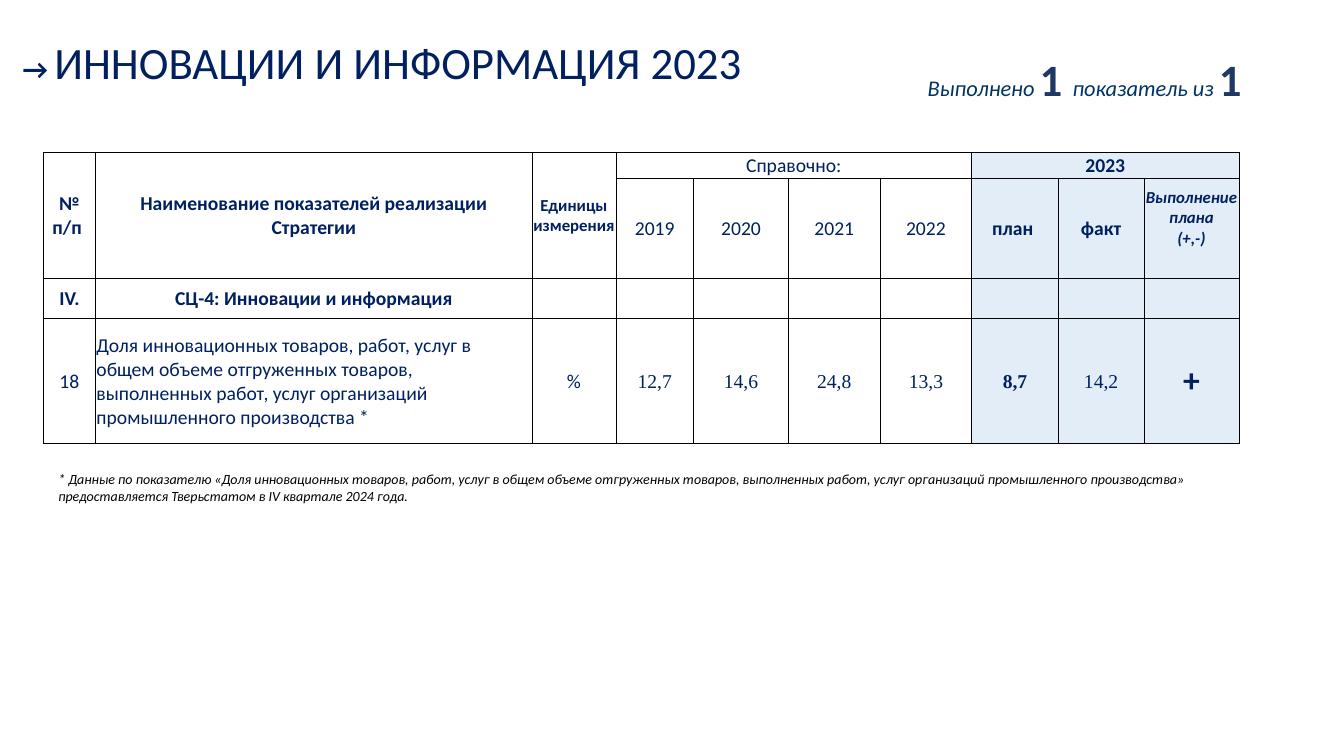
from dataclasses import dataclass

from lxml import etree
from pptx import Presentation
from pptx.dml.color import RGBColor
from pptx.enum.text import MSO_ANCHOR, MSO_AUTO_SIZE, PP_ALIGN
from pptx.oxml.ns import qn
from pptx.util import Cm, Pt

LEFT, MID, RIGHT = PP_ALIGN.LEFT, PP_ALIGN.CENTER, PP_ALIGN.RIGHT
CENTRE = MSO_ANCHOR.MIDDLE
GROW = MSO_AUTO_SIZE.SHAPE_TO_FIT_TEXT

HUES = {"navy": "002060", "teal": "003366", "deep": "203864",
        "black": "000000", "white": "FFFFFF", "tint": "DEEBF7"}
SANS, SERIF = "Calibri", "Times New Roman"


@dataclass
class Run:
    text: str
    size: float
    hue: str
    bold: bool = False
    slant: bool = False


@dataclass
class Box:
    left: float
    top: float
    width: float
    height: float
    align: PP_ALIGN
    runs: list[Run]
    wrap: bool = True


@dataclass
class Entry:
    row: int
    col: int
    text: str
    bold: bool = False
    size: float = 14
    face: str = SANS
    slant: bool = False
    align: PP_ALIGN = MID
    rows: int = 1
    cols: int = 1
    foot: float = 0  # bottom margin


# Text boxes
BOXES = [
    Box(0.23, 0.74, 18.82, 1.63, MID, [
        Run("→ ", 20, "navy", bold=True),
        Run("ИННОВАЦИИ И ИНФОРМАЦИЯ 2023", 32, "navy")], wrap=False),
    Box(1.22, 11.73, 31.39, 1.55, LEFT, [
        Run("* Данные по показателю «Доля инновационных товаров, работ, услуг "
            "в общем объеме отгруженных товаров, выполненных работ, услуг "
            "организаций промышленного производства» предоставляется "
            "Тверьстатом в IV квартале 2024 года.", 10, "black", slant=True)]),
    Box(22.73, 1.19, 8.81, 1.63, RIGHT, [
        Run("Выполнено ", 16, "teal", slant=True),
        Run("1 ", 32, "deep", bold=True),
        Run("показатель из ", 16, "teal", slant=True),
        Run("1", 32, "deep", bold=True)]),
]

# Table
WIDTHS = [1.32, 11, 2.11, 1.96, 2.39, 2.31, 2.31, 2.18, 2.16, 2.39]
HEIGHTS = [0.66, 2.51, 1.02, 3.15]
YEARS = ["2019", "2020", "2021", "2022"]
FIGURES = ["12,7", "14,6", "24,8", "13,3", "8,7", "14,2"]
BASE, PLAN = 3, 7  # first columns of the past years and of 2023

ENTRIES = [
    Entry(0, 0, "№ п/п ", bold=True, rows=2),
    Entry(0, 1, "Наименование показателей реализации Стратегии",
          bold=True, rows=2),
    Entry(0, 2, "Единицы измерения", bold=True, size=12, rows=2),
    Entry(0, BASE, "Справочно:", cols=4),
    Entry(0, PLAN, "2023", bold=True, cols=3),
    *[Entry(1, BASE + n, year) for n, year in enumerate(YEARS)],
    Entry(1, 7, "план ", bold=True),
    Entry(1, 8, "факт", bold=True),
    Entry(1, 9, "Выполнение плана\n(+,-)", bold=True, size=12, slant=True,
          foot=0.55),
    Entry(2, 0, "IV.", bold=True),
    Entry(2, 1, "СЦ-4: Инновации и информация", bold=True),
    Entry(3, 0, "18"),
    Entry(3, 1, "Доля инновационных товаров, работ, услуг в общем объеме "
          "отгруженных товаров, выполненных работ, услуг организаций "
          "промышленного производства *", align=LEFT),
    Entry(3, 2, "%"),
    *[Entry(3, BASE + n, value, bold=BASE + n == PLAN, face=SERIF)
      for n, value in enumerate(FIGURES)],
    Entry(3, 9, "+", bold=True, size=24),
]


def style(font, size: float, hue: str, bold: bool, slant: bool,
          face: str = SANS) -> None:
    font.name, font.size = face, Pt(size)
    font.bold, font.italic = bold, slant
    font.color.rgb = RGBColor.from_string(HUES[hue])


def add_box(slide, box: Box) -> None:
    shape = slide.shapes.add_textbox(
        Cm(box.left), Cm(box.top), Cm(box.width), Cm(box.height))
    frame = shape.text_frame
    frame.word_wrap, frame.auto_size = box.wrap, GROW
    para = frame.paragraphs[0]
    para.alignment = box.align
    for part in box.runs:
        run = para.add_run()
        run.text = part.text
        style(run.font, part.size, part.hue, part.bold, part.slant)


def add_edges(cell) -> None:
    props = cell._tc.get_or_add_tcPr()
    for n, side in enumerate(("lnL", "lnR", "lnT", "lnB")):
        line = etree.Element(qn(f"a:{side}"), w=str(Pt(0.5)))
        fill = etree.SubElement(line, qn("a:solidFill"))
        etree.SubElement(fill, qn("a:srgbClr"), val=HUES["black"])
        props.insert(n, line)


def paint(cell, hue: str) -> None:
    cell.fill.solid()
    cell.fill.fore_color.rgb = RGBColor.from_string(HUES[hue])
    if hue == "tint":
        tone = cell._tc.tcPr.find(".//" + qn("a:srgbClr"))
        etree.SubElement(tone, qn("a:alpha"), val="85000")


def fill_cell(table, entry: Entry) -> None:
    cell = table.cell(entry.row, entry.col)
    if entry.rows * entry.cols > 1:
        cell.merge(table.cell(entry.row + entry.rows - 1,
                              entry.col + entry.cols - 1))
    cell.text = entry.text
    cell.margin_bottom = Cm(entry.foot)
    for para in cell.text_frame.paragraphs:
        para.alignment = entry.align
        style(para.font, entry.size, "navy", entry.bold, entry.slant,
              entry.face)
        for run in para.runs:
            style(run.font, entry.size, "navy", entry.bold, entry.slant,
                  entry.face)


def add_grid(slide) -> None:
    table = slide.shapes.add_table(
        len(HEIGHTS), len(WIDTHS), Cm(1.09), Cm(3.84),
        Cm(sum(WIDTHS)), Cm(sum(HEIGHTS))).table
    table.first_row = table.horz_banding = False
    for column, width in zip(table.columns, WIDTHS):
        column.width = Cm(width)
    for row, height in zip(table.rows, HEIGHTS):
        row.height = Cm(height)
        for col, cell in enumerate(row.cells):
            cell.vertical_anchor = CENTRE
            cell.margin_left = cell.margin_right = cell.margin_top = Cm(0.02)
            cell.margin_bottom = Cm(0)
            paint(cell, "tint" if col >= PLAN else "white")
            add_edges(cell)
    for entry in ENTRIES:
        fill_cell(table, entry)


def main() -> None:
    deck = Presentation()
    deck.slide_width, deck.slide_height = Cm(33.87), Cm(19.05)
    slide = deck.slides.add_slide(deck.slide_layouts[6])
    add_grid(slide)
    for box in BOXES:
        add_box(slide, box)
    deck.save("out.pptx")


if __name__ == "__main__":
    main()
